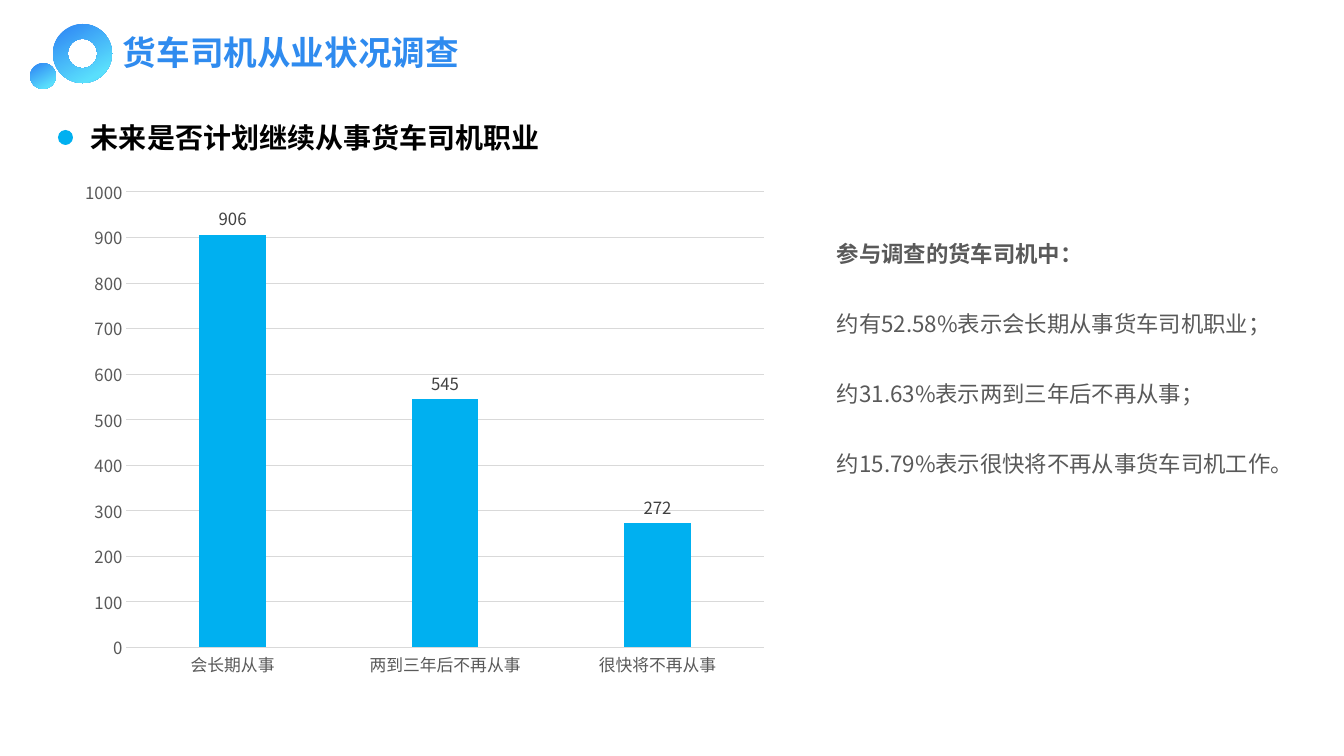
"""Build a slide on whether truck drivers plan to stay in the job."""
import pptx
import pptx.chart.data
import pptx.dml.color
import pptx.enum.chart
import pptx.enum.shapes
import pptx.enum.text
import pptx.oxml
import pptx.oxml.ns
import pptx.util

FONT = "Noto Sans CJK SC"
COLORS = {
    "title": "2F8BEF", "heading": "000000", "body": "595959", "label": "404040",
    "accent": "00B0F0", "grid": "D9D9D9", "deep": "338FF5", "light": "5ADFFC",
}
TITLE = "货车司机从业状况调查"
HEADING = "未来是否计划继续从事货车司机职业"
FINDINGS = [
    "参与调查的货车司机中：",
    "约有52.58%表示会长期从事货车司机职业；",
    "约31.63%表示两到三年后不再从事；",
    "约15.79%表示很快将不再从事货车司机工作。",
]
PLANS = {"会长期从事": 906, "两到三年后不再从事": 545, "很快将不再从事": 272}
SHAPES = pptx.enum.shapes.MSO_SHAPE
ORNAMENTS = [(SHAPES.DONUT, (53, 24, 59, 59)), (SHAPES.OVAL, (30, 63, 26, 26))]
BULLET_BOX = (58, 130, 15, 15)
TITLE_BOX = (113, 27, 372, 50)
HEADING_BOX = (84, 116, 1158, 41)
FINDINGS_BOX = (827, 227, 483, 258)
CHART_BOX = (71, 169, 707, 518)
LINE_PITCH = pptx.util.Pt(25)


def px(length):
    return round(length * 914400 / 100.8)


def place(box):
    return [px(length) for length in box]


def rgb(name):
    return pptx.dml.color.RGBColor.from_string(COLORS[name])


def style(font, size, color, bold=False):
    font.name, font.size, font.bold = FONT, pptx.util.Pt(size), bold
    font.color.rgb = rgb(color)


def set_east_asian_font(element):
    for latin in list(element.iter(pptx.oxml.ns.qn("a:latin"))):
        latin.addnext(pptx.oxml.parse_xml(
            f'<a:ea {pptx.oxml.ns.nsdecls("a")} typeface="{FONT}"/>'))


def add_mark(slide, kind, box):
    mark = slide.shapes.add_shape(kind, *place(box))
    mark.shadow.inherit = False
    mark.line.fill.background()
    return mark


def add_text(slide, box, lines, size, color):
    words = slide.shapes.add_textbox(*place(box))
    frame = words.text_frame
    frame.word_wrap = True
    frame.text = "\n".join(lines)
    for paragraph in frame.paragraphs:
        for run in paragraph.runs:
            style(run.font, size, color, paragraph.text == lines[0])
    set_east_asian_font(words.element)
    return frame


def add_plans_chart(slide):
    plans = pptx.chart.data.CategoryChartData()
    plans.categories = list(PLANS)
    plans.add_series("人数", list(PLANS.values()))
    chart = slide.shapes.add_chart(
        pptx.enum.chart.XL_CHART_TYPE.COLUMN_CLUSTERED, *place(CHART_BOX), plans).chart
    chart.has_legend = chart.has_title = False
    style(chart.font, 10, "heading")

    columns = chart.plots[0]
    columns.vary_by_categories = False
    columns.gap_width, columns.overlap = 219, -27
    drivers = columns.series[0]
    drivers.format.fill.solid()
    drivers.format.fill.fore_color.rgb = rgb("accent")
    labels = drivers.data_labels
    labels.show_value = True
    labels.position = pptx.enum.chart.XL_LABEL_POSITION.OUTSIDE_END
    style(labels.font, 12, "label")

    plan_axis, count_axis = chart.category_axis, chart.value_axis
    for axis in (plan_axis, count_axis):
        axis.major_tick_mark = axis.minor_tick_mark = pptx.enum.chart.XL_TICK_MARK.NONE
        style(axis.tick_labels.font, 12, "body")
    count_axis.minimum_scale, count_axis.maximum_scale = 0, 1000
    count_axis.major_unit = 100
    count_axis.format.line.fill.background()
    for line in (plan_axis.format.line, count_axis.major_gridlines.format.line):
        line.color.rgb = rgb("grid")
        line.width = pptx.util.Pt(0.75)
    set_east_asian_font(chart.element)


def main():
    deck = pptx.Presentation()
    deck.slide_width, deck.slide_height = px(1344), px(756)
    slide = deck.slides.add_slide(deck.slide_layouts[6])

    for kind, box in ORNAMENTS:
        fill = add_mark(slide, kind, box).fill
        fill.gradient()
        fill.gradient_angle = 300
        for stop, position, color in zip(
                fill.gradient_stops, (0.12, 0.82), ("deep", "light")):
            stop.position = position
            stop.color.rgb = rgb(color)
    add_text(slide, TITLE_BOX, [TITLE], 24, "title")

    bullet = add_mark(slide, SHAPES.OVAL, BULLET_BOX)
    bullet.fill.solid()
    bullet.fill.fore_color.rgb = rgb("accent")
    heading = add_text(slide, HEADING_BOX, [HEADING], 20, "heading")
    heading.margin_left = heading.margin_right = px(7)
    heading.margin_top = heading.margin_bottom = px(4)

    findings = add_text(slide, FINDINGS_BOX, FINDINGS, 16, "body")
    for paragraph in findings.paragraphs:
        paragraph.alignment = pptx.enum.text.PP_ALIGN.JUSTIFY
        paragraph.line_spacing = LINE_PITCH
    for paragraph in findings.paragraphs[1:]:
        paragraph.space_before = LINE_PITCH
    add_plans_chart(slide)
    deck.save("out.pptx")


if __name__ == "__main__":
    main()
